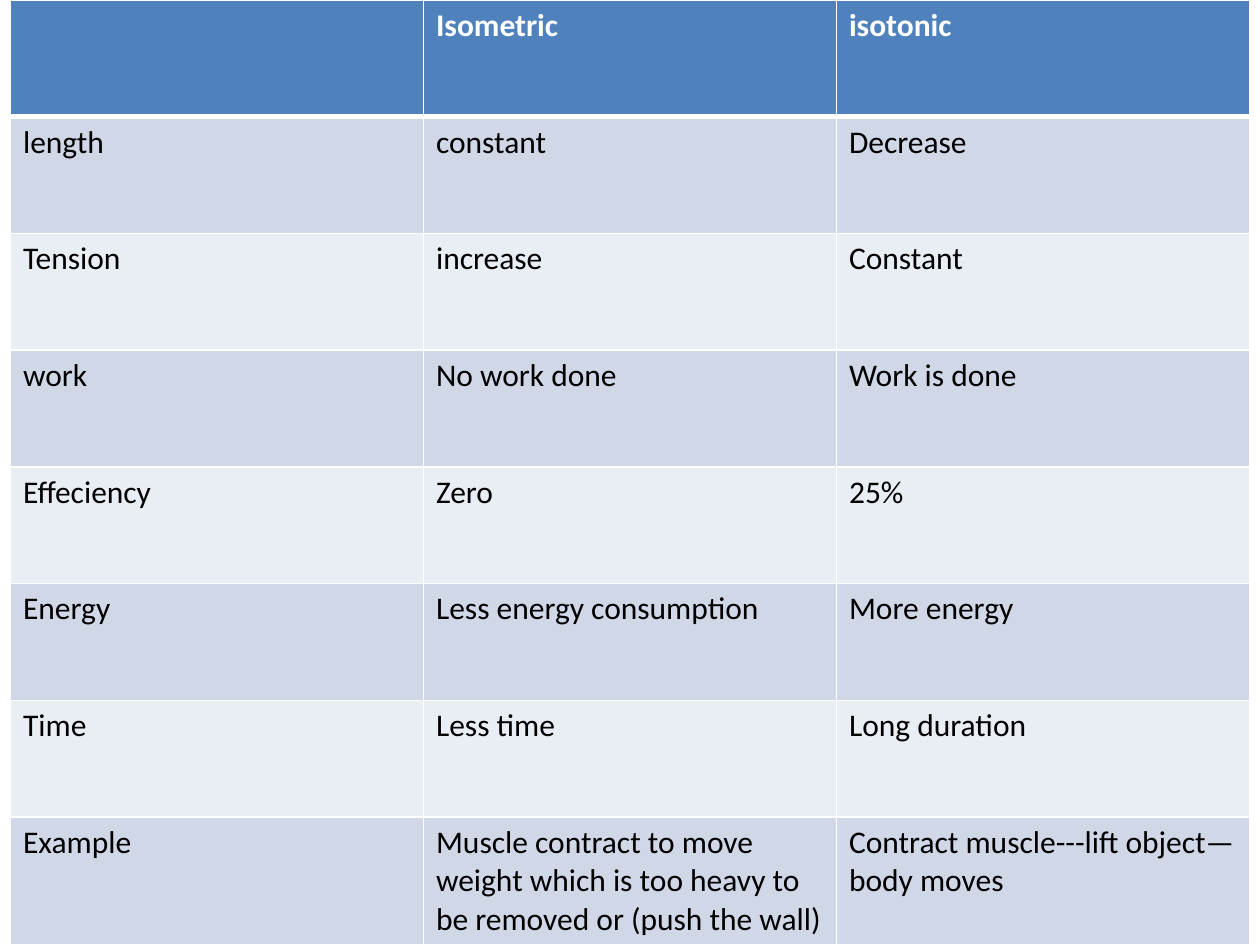
from typing import NamedTuple

from lxml.etree import fromstring
from pptx import Presentation
from pptx.dml.color import RGBColor as Color
from pptx.oxml.ns import nsdecls
from pptx.util import Pt

WHITE = RGB_WHITE = Color(0xFF, 0xFF, 0xFF)
BLACK = Color(0x00, 0x00, 0x00)
BLUE = Color(0x4F, 0x81, 0xBD)
DARK = Color(0xD0, 0xD8, 0xE8)
LIGHT = Color(0xE9, 0xED, 0xF4)

LEFT, TOP = Pt(6), Pt(0)
WIDTH, HEIGHT = Pt(236), Pt(66.72)
THIN, THICK = Pt(1), Pt(3)


class Row(NamedTuple):
    label: str
    metric: str
    tonic: str


ROWS = [
    Row("", "Isometric", "isotonic"),
    Row("length", "constant", "Decrease"),
    Row("Tension", "increase", "Constant"),
    Row("work", "No work done", "Work is done"),
    Row("Effeciency", "Zero", "25%"),
    Row("Energy", "Less energy consumption", "More energy"),
    Row("Time", "Less time", "Long duration"),
    Row(
        "Example",
        "Muscle contract to move weight which is too heavy to be removed or (push the wall)",
        "Contract muscle---lift object—body moves",
    ),
]


def write(frame, text: str, *, size=Pt(18), color: Color = BLACK, bold: bool = False) -> None:
    para = frame.paragraphs[0]
    font = para.font
    if text:
        run = para.add_run()
        run.text = text
        font = run.font
    font.name = "Calibri"
    font.size = size
    font.bold = bold
    font.color.rgb = color


def edge(cell, above: int, below: int) -> None:
    props = cell._tc.get_or_add_tcPr()
    sides = {"L": THIN, "R": THIN, "T": above, "B": below}
    for place, (side, width) in enumerate(sides.items()):
        line = fromstring(
            f'<a:ln{side} {nsdecls("a")} w="{width}"><a:solidFill>'
            f'<a:srgbClr val="{WHITE}"/></a:solidFill></a:ln{side}>'
        )
        props.insert(place, line)


def draw(slide, rows: list[Row]) -> None:
    count, span = len(rows), len(Row._fields)
    frame = slide.shapes.add_table(count, span, LEFT, TOP, WIDTH * span, HEIGHT * count)
    table = frame.table
    for col in table.columns:
        col.width = WIDTH
    for index, row in enumerate(rows):
        table.rows[index].height = HEIGHT
        head = index == 0
        fill = BLUE if head else DARK if index % 2 else LIGHT
        for place, text in enumerate(row):
            cell = table.cell(index, place)
            cell.fill.solid()
            cell.fill.fore_color.rgb = fill
            write(cell.text_frame, text, color=WHITE if head else BLACK, bold=head)
            edge(cell, THICK if index == 1 else THIN, THICK if head else THIN)


def main() -> None:
    deck = Presentation()
    deck.slide_width, deck.slide_height = Pt(720), Pt(540)
    slide = deck.slides.add_slide(deck.slide_layouts[6])
    draw(slide, ROWS)
    deck.save("out.pptx")


if __name__ == "__main__":
    main()
